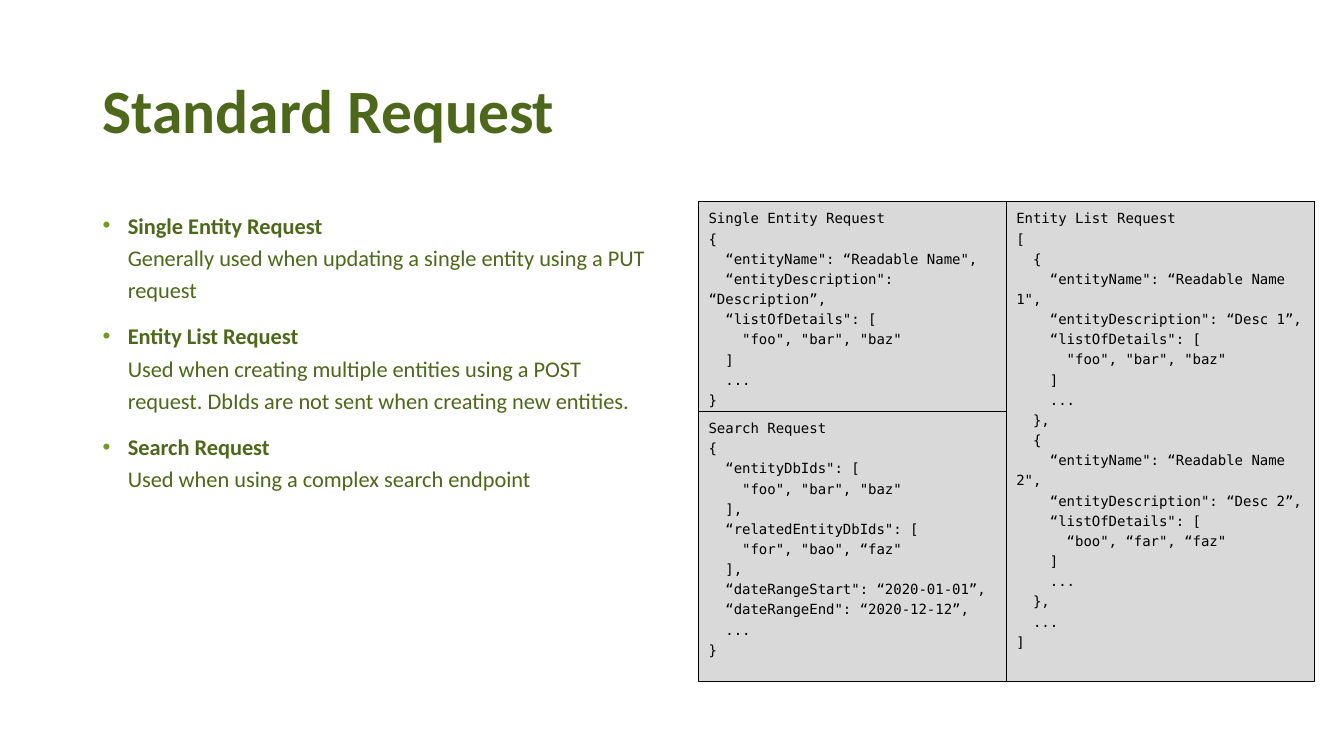
from dataclasses import dataclass

from lxml import etree
from pptx import Presentation
from pptx.dml.color import RGBColor
from pptx.enum import shapes, text
from pptx.oxml import ns
from pptx.util import Pt


@dataclass(frozen=True)
class Theme:
    green: RGBColor = RGBColor(0x4D, 0x67, 0x1B)
    bullet_green: RGBColor = RGBColor(0x73, 0x9A, 0x28)
    panel_grey: RGBColor = RGBColor(0xD9, 0xD9, 0xD9)
    black: RGBColor = RGBColor(0, 0, 0)
    text_font: str = "Calibri"
    code_font: str = "DejaVu Sans Mono"
    title_size: int = 44
    body_size: int = 16
    code_size: int = 10


THEME = Theme()
LEFT = 66.24
TOP = 144
CONTENT_HEIGHT = 342.72
PANEL_LEFT = 499.1
PANEL_WIDTH = 219.8
SINGLE_HEIGHT = 149.76

REQUESTS = [
    ("Single Entity Request",
     "Generally used when updating a single entity using a PUT request"),
    ("Entity List Request",
     "Used when creating multiple entities using a POST request. "
     "DbIds are not sent when creating new entities."),
    ("Search Request", "Used when using a complex search endpoint"),
]

SINGLE_CODE = """Single Entity Request
{
  “entityName": “Readable Name",
  “entityDescription": “Description”,
  “listOfDetails": [
    "foo", "bar", "baz"
  ]
  ...
}"""

LIST_CODE = """Entity List Request
[
  {
    “entityName": “Readable Name 1",
    “entityDescription": “Desc 1”,
    “listOfDetails": [
      "foo", "bar", "baz"
    ]
    ...
  },
  {
    “entityName": “Readable Name 2",
    “entityDescription": “Desc 2”,
    “listOfDetails": [
      “boo", “far", “faz"
    ]
    ...
  },
  ...
]"""

SEARCH_CODE = """Search Request
{
  “entityDbIds": [
    "foo", "bar", "baz"
  ],
  “relatedEntityDbIds": [
    "for", "bao", “faz"
  ],
  “dateRangeStart": “2020-01-01”,
  “dateRangeEnd": “2020-12-12”,
  ...
}"""


def style_font(font, name, size, color):
    font.name = name
    font.size = Pt(size)
    font.color.rgb = color


def add_text_frame(slide, left, top, width, height):
    box = slide.shapes.add_textbox(Pt(left), Pt(top), Pt(width), Pt(height))
    box.text_frame.word_wrap = True
    return box.text_frame


def add_bullet(paragraph, indent):
    properties = paragraph._p.get_or_add_pPr()
    properties.set("marL", str(Pt(indent)))
    properties.set("indent", str(-Pt(indent)))
    color = etree.SubElement(properties, ns.qn("a:buClr"))
    etree.SubElement(color, ns.qn("a:srgbClr"), val=str(THEME.bullet_green))
    etree.SubElement(properties, ns.qn("a:buFont"), typeface="Arial")
    etree.SubElement(properties, ns.qn("a:buChar"), char="•")


def add_title(slide, title):
    frame = add_text_frame(slide, LEFT, 28.8, 828, 104.4)
    frame.vertical_anchor = text.MSO_ANCHOR.MIDDLE
    paragraph = frame.paragraphs[0]
    paragraph.text = title
    paragraph.line_spacing = 0.9
    style_font(paragraph.font, THEME.text_font, THEME.title_size, THEME.green)
    paragraph.font.bold = True


def add_request_list(slide, requests):
    frame = add_text_frame(slide, LEFT, TOP, 408.24, CONTENT_HEIGHT)
    for index, (name, description) in enumerate(requests):
        paragraph = frame.add_paragraph() if index else frame.paragraphs[0]
        paragraph.line_spacing = 1.2
        if index:
            paragraph.space_before = Pt(10)
        add_bullet(paragraph, 18)
        style_font(paragraph.font, THEME.text_font, THEME.body_size, THEME.green)
        heading = paragraph.add_run()
        heading.text = name
        heading.font.bold = True
        paragraph.add_line_break()
        paragraph.add_run().text = description


def add_code_panel(slide, left, top, height, code):
    panel = slide.shapes.add_shape(
        shapes.MSO_SHAPE.RECTANGLE, Pt(left), Pt(top), Pt(PANEL_WIDTH), Pt(height))
    panel.shadow.inherit = False
    panel.fill.solid()
    panel.fill.fore_color.rgb = THEME.panel_grey
    panel.line.color.rgb = THEME.black
    panel.line.width = Pt(0.75)
    frame = panel.text_frame
    frame.word_wrap = True
    frame.vertical_anchor = text.MSO_ANCHOR.TOP
    frame.text = code
    for paragraph in frame.paragraphs:
        paragraph.alignment = text.PP_ALIGN.LEFT
        paragraph.line_spacing = 1.2
        style_font(paragraph.font, THEME.code_font, THEME.code_size, THEME.black)


def main():
    presentation = Presentation()
    presentation.slide_width = Pt(960)
    presentation.slide_height = Pt(540)
    slide = presentation.slides.add_slide(presentation.slide_layouts[6])

    add_title(slide, "Standard Request")
    add_request_list(slide, REQUESTS)
    add_code_panel(slide, PANEL_LEFT, TOP, SINGLE_HEIGHT, SINGLE_CODE)
    add_code_panel(slide, PANEL_LEFT + PANEL_WIDTH, TOP, CONTENT_HEIGHT, LIST_CODE)
    add_code_panel(slide, PANEL_LEFT, TOP + SINGLE_HEIGHT,
                   CONTENT_HEIGHT - SINGLE_HEIGHT, SEARCH_CODE)
    presentation.save("out.pptx")


if __name__ == "__main__":
    main()
